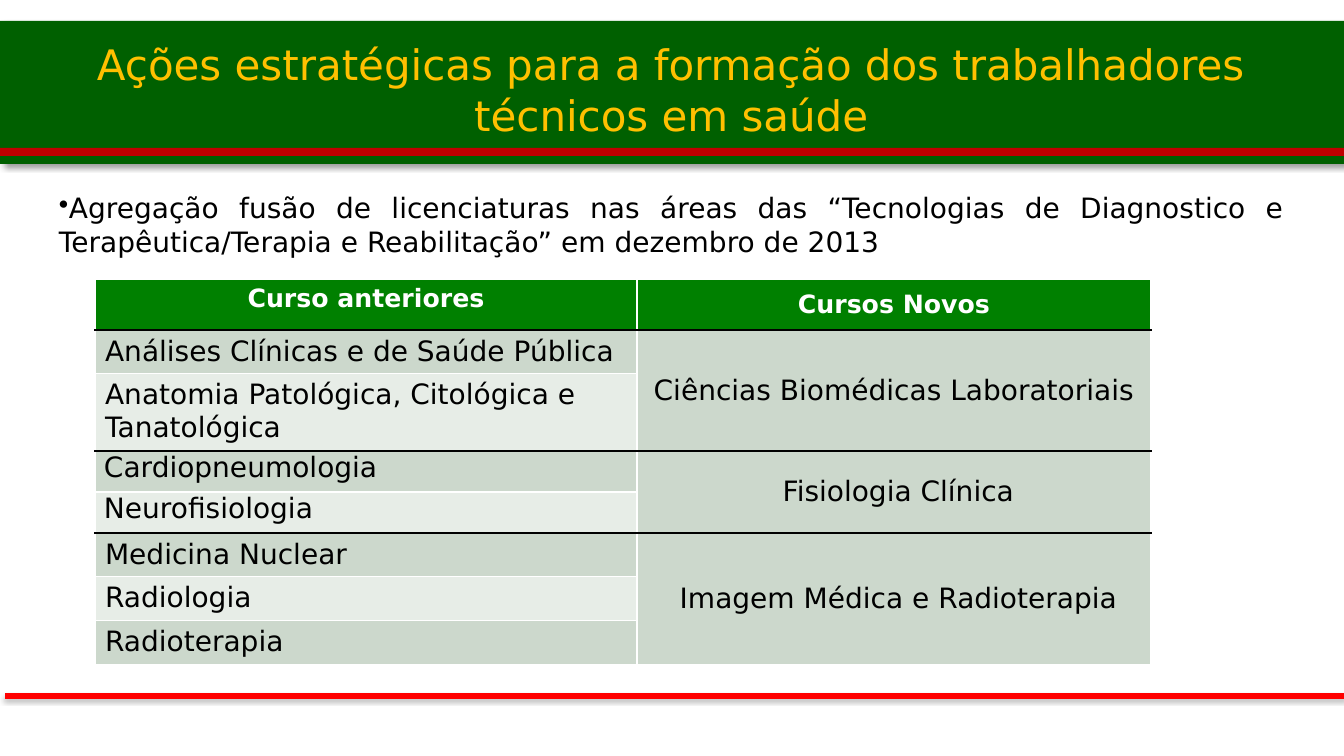
from lxml import etree
from pptx import Presentation
from pptx import util as u
from pptx.dml.color import RGBColor
from pptx.enum import shapes, text
from pptx.oxml import ns

PX = 914400 / 100.8
FONT = "DejaVu Sans"
DARK_GREEN = RGBColor(0x00, 0x60, 0x00)
HEADER_GREEN = RGBColor(0x00, 0x80, 0x00)
DARK_RED = RGBColor(0xC0, 0x00, 0x00)
RED = RGBColor(0xFF, 0x00, 0x00)
GOLD = RGBColor(0xFF, 0xC0, 0x00)
BLACK = RGBColor(0x00, 0x00, 0x00)
WHITE = RGBColor(0xFF, 0xFF, 0xFF)
BAND_DARK = RGBColor(0xCC, 0xD8, 0xCC)
BAND_LIGHT = RGBColor(0xE7, 0xED, 0xE7)


def px(*lengths):
    return [u.Emu(round(length * PX)) for length in lengths]


def write(frame, words, size, color, align, bold=False):
    """Fill the frame's first paragraph and return it."""
    paragraph = frame.paragraphs[0]
    paragraph.text = words
    paragraph.alignment = align
    paragraph.font.name = FONT
    paragraph.font.size = u.Pt(size)
    paragraph.font.bold = bold
    paragraph.font.color.rgb = color
    return paragraph


presentation = Presentation()
presentation.slide_width, presentation.slide_height = px(1344, 756)
slide = presentation.slides.add_slide(presentation.slide_layouts[6])

# Bands: box, colour, shadow (blur pt, distance pt, degrees, opacity %)
bands = [
    ((0, 21, 1344, 143), DARK_GREEN, (4, 3, 45, 40)),
    ((0, 148, 1344, 8), DARK_RED, None),
    ((5, 693, 1339, 6), RED, (3.1, 1.8, 90, 35)),
]
for box, color, shadow in bands:
    band = slide.shapes.add_shape(shapes.MSO_SHAPE.RECTANGLE, *px(*box))
    band.fill.solid()
    band.fill.fore_color.rgb = color
    band.line.fill.background()
    band.shadow.inherit = False
    if shadow:
        blur, distance, angle, opacity = shadow
        effects = band._element.spPr.find(ns.qn("a:effectLst"))
        outer = etree.SubElement(
            effects, ns.qn("a:outerShdw"), blurRad=str(u.Pt(blur)),
            dist=str(u.Pt(distance)), dir=str(angle * 60000), algn="ctr", rotWithShape="0")
        shade = etree.SubElement(outer, ns.qn("a:srgbClr"), val=str(BLACK))
        etree.SubElement(shade, ns.qn("a:alpha"), val=str(opacity * 1000))

# Title and bullet
frames = []
for box in [(47, 30, 1249, 118), (47, 185, 1249, 80)]:
    frame = slide.shapes.add_textbox(*px(*box)).text_frame
    frame.word_wrap = True
    frame.margin_left, frame.margin_top, frame.margin_right, frame.margin_bottom = px(12, 6, 12, 6)
    frames.append(frame)
title, body = frames
title.vertical_anchor = text.MSO_ANCHOR.MIDDLE
write(title, "Ações estratégicas para a formação dos trabalhadores técnicos em saúde",
      30, GOLD, text.PP_ALIGN.CENTER)

bullet_properties = body.paragraphs[0]._p.get_or_add_pPr()
bullet_properties.set("marL", "0")
bullet_properties.set("indent", str(-px(38)[0]))
etree.SubElement(bullet_properties, ns.qn("a:buChar"), char="•")
write(body, "Agregação fusão de licenciaturas nas áreas das “Tecnologias de Diagnostico e "
      "Terapêutica/Terapia e Reabilitação” em dezembro de 2013",
      20, BLACK, text.PP_ALIGN.JUSTIFY)

# Course table: each new course merges the earlier ones beside it
groups = [
    ("Ciências Biomédicas Laboratoriais",
     ["Análises Clínicas e de Saúde Pública", "Anatomia Patológica, Citológica e Tanatológica"]),
    ("Fisiologia Clínica", ["Cardiopneumologia", "Neurofisiologia"]),
    ("Imagem Médica e Radioterapia", ["Medicina Nuclear", "Radiologia", "Radioterapia"]),
]
row_heights = [51, 43, 75, 41, 41, 42, 43, 43]
table = slide.shapes.add_table(len(row_heights), 2, *px(95, 279, 1056, sum(row_heights))).table
for column, width in zip(table.columns, px(542, 514)):
    column.width = width
for row, height in zip(table.rows, px(*row_heights)):
    row.height = height

group_starts = [1, 3, 5]
for row_index in range(len(row_heights)):
    for column_index in range(2):
        cell = table.cell(row_index, column_index)
        top = BLACK if row_index in group_starts else WHITE
        bottom = BLACK if row_index + 1 in group_starts else WHITE
        properties = cell._tc.get_or_add_tcPr()
        for side, color in zip("LRTB", (WHITE, WHITE, top, bottom)):
            border = etree.SubElement(properties, ns.qn("a:ln" + side), w=str(u.Pt(1)))
            fill = etree.SubElement(border, ns.qn("a:solidFill"))
            etree.SubElement(fill, ns.qn("a:srgbClr"), val=str(color))
        cell.fill.solid()
        if row_index == 0:
            cell.fill.fore_color.rgb = HEADER_GREEN
        else:
            light = column_index == 0 and row_index % 2 == 0
            cell.fill.fore_color.rgb = BAND_LIGHT if light else BAND_DARK

for column_index, heading in enumerate(["Curso anteriores", "Cursos Novos"]):
    write(table.cell(0, column_index).text_frame, heading, 18, WHITE, text.PP_ALIGN.CENTER, True)
table.cell(0, 1).vertical_anchor = text.MSO_ANCHOR.MIDDLE

tight_cells = [table.cell(3, 0), table.cell(4, 0), table.cell(3, 1), table.cell(5, 1)]
for cell in tight_cells:
    cell.margin_left, cell.margin_top, cell.margin_right, cell.margin_bottom = px(9, 0, 0, 0)

for start, (new_course, old_courses) in zip(group_starts, groups):
    for row_index, old_course in enumerate(old_courses, start):
        write(table.cell(row_index, 0).text_frame, old_course, 20, BLACK, text.PP_ALIGN.LEFT)
    merged = table.cell(start, 1)
    merged.merge(table.cell(start + len(old_courses) - 1, 1))
    merged.vertical_anchor = text.MSO_ANCHOR.MIDDLE
    write(merged.text_frame, new_course, 20, BLACK, text.PP_ALIGN.CENTER)
table.cell(5, 0).vertical_anchor = text.MSO_ANCHOR.MIDDLE

presentation.save("out.pptx")
